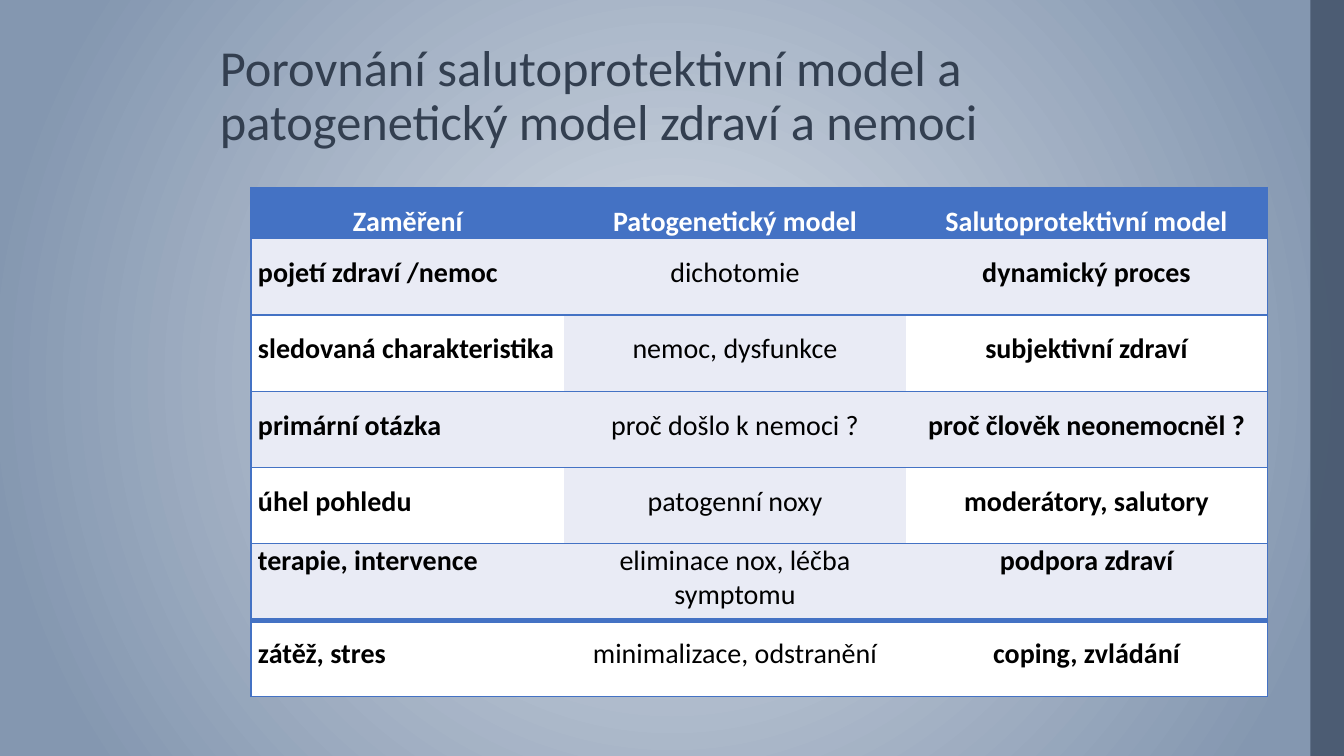
from lxml.etree import SubElement
from pptx import Presentation
from pptx.dml.color import RGBColor
from pptx.enum.shapes import MSO_SHAPE
from pptx.enum.text import MSO_ANCHOR, PP_ALIGN
from pptx.oxml.ns import qn
from pptx.util import Pt

COLORS = {
    "glow": "D6DCE5",
    "backdrop": "8497B0",
    "stripe": "44546A",
    "title": "333F50",
    "accent": "4472C4",
    "band": "E9EBF5",
    "white": "FFFFFF",
    "black": "000000",
}
FONT = "Calibri"
SLIDE_WIDTH, SLIDE_HEIGHT = 960, 540
TITLE = "Porovnání salutoprotektivní model a patogenetický model zdraví a nemoci"
COMPARISON = [
    ("Zaměření", "Patogenetický model", "Salutoprotektivní model"),
    ("pojetí zdraví /nemoc", "dichotomie", "dynamický proces"),
    ("sledovaná charakteristika", "nemoc, dysfunkce", "subjektivní zdraví"),
    ("primární otázka", "proč došlo k nemoci ?", "proč člověk neonemocněl ?"),
    ("úhel pohledu", "patogenní noxy", "moderátory, salutory"),
    ("terapie, intervence", "eliminace nox, léčba symptomu", "podpora zdraví"),
    ("zátěž, stres", "minimalizace, odstranění", "coping, zvládání"),
]
COLUMN_SHARES = (3.11, 3.39, 3.59)
HEADER_HEIGHT = 36.6
THERAPY_ROW = 5
STRESS_ROW = 6


def color(name):
    return RGBColor.from_string(COLORS[name])


def add_run(paragraph, wording, size, color_name, bold=False):
    run = paragraph.add_run()
    run.text = wording
    run.font.name = FONT
    run.font.size = Pt(size)
    run.font.bold = bold
    run.font.color.rgb = color(color_name)


def paint_background(slide):
    fill = slide.background.fill
    fill.gradient()
    for stop, name, position in zip(fill.gradient_stops, ("glow", "backdrop"), (0, 0.9)):
        stop.color.rgb = color(name)
        stop.position = position
    gradient = slide.element.find(".//" + qn("a:gradFill"))
    gradient.remove(gradient.find(qn("a:lin")))
    circle = SubElement(gradient, qn("a:path"), {"path": "circle"})
    SubElement(circle, qn("a:fillToRect"), {side: "50000" for side in "ltrb"})


def add_stripe(slide, left, top, width, height):
    stripe = slide.shapes.add_shape(
        MSO_SHAPE.RECTANGLE, Pt(left), Pt(top), Pt(width), Pt(height))
    stripe.shadow.inherit = False
    stripe.fill.solid()
    stripe.fill.fore_color.rgb = color("stripe")
    stripe.line.fill.background()
    tint = stripe.element.spPr.find(qn("a:solidFill"))[0]
    SubElement(tint, qn("a:alpha"), {"val": "87000"})


def add_title(slide, left, top, width, height):
    frame = slide.shapes.add_textbox(
        Pt(left), Pt(top), Pt(width), Pt(height)).text_frame
    frame.word_wrap = True
    frame.vertical_anchor = MSO_ANCHOR.BOTTOM
    heading = frame.paragraphs[0]
    heading.line_spacing = 0.9
    add_run(heading, TITLE, 36, "title")


def set_borders(cell, widths):
    properties = cell._tc.get_or_add_tcPr()
    for side, width in widths.items():
        border = SubElement(properties, qn(f"a:ln{side}"), {"w": str(Pt(width))})
        if width:
            paint = SubElement(border, qn("a:solidFill"))
            SubElement(paint, qn("a:srgbClr"), {"val": COLORS["accent"]})
        else:
            SubElement(border, qn("a:noFill"))


def cell_fill(row, column):
    if row == 0:
        return "accent"
    if row % 2 or (column == 1 and row != STRESS_ROW):
        return "band"
    return "white"


def fill_cell(cell, row, column, wording):
    set_borders(cell, {
        "L": 1 if column == 0 else 0,
        "R": 1 if column == len(COLUMN_SHARES) - 1 else 0,
        "T": 4 if row == STRESS_ROW else 1,
        "B": 4 if row == THERAPY_ROW else 1,
    })
    cell.fill.solid()
    cell.fill.fore_color.rgb = color(cell_fill(row, column))
    cell.margin_left = cell.margin_right = Pt(5)
    cell.margin_top = cell.margin_bottom = Pt(0)
    entry = cell.text_frame.paragraphs[0]
    entry.alignment = PP_ALIGN.LEFT if row and column == 0 else PP_ALIGN.CENTER
    entry.line_spacing = 1.0 if row == THERAPY_ROW else 1.5
    add_run(entry, wording, 20, "black" if row else "white", row == 0 or column != 1)


def add_comparison(slide, left, top, width, height):
    table = slide.shapes.add_table(
        len(COMPARISON), len(COLUMN_SHARES),
        Pt(left), Pt(top), Pt(width), Pt(height)).table
    table.first_row = table.horz_banding = False
    for column, share in zip(table.columns, COLUMN_SHARES):
        column.width = Pt(width * share / sum(COLUMN_SHARES))
    body_height = (height - HEADER_HEIGHT) / (len(COMPARISON) - 1)
    for row, entries in enumerate(COMPARISON):
        table.rows[row].height = Pt(body_height if row else HEADER_HEIGHT)
        for column, wording in enumerate(entries):
            fill_cell(table.cell(row, column), row, column, wording)


def main():
    presentation = Presentation()
    presentation.slide_width = Pt(SLIDE_WIDTH)
    presentation.slide_height = Pt(SLIDE_HEIGHT)
    slide = presentation.slides.add_slide(presentation.slide_layouts[6])
    paint_background(slide)
    add_stripe(slide, 936, 0, SLIDE_WIDTH - 936, SLIDE_HEIGHT)
    add_title(slide, 150, 13.7, 746, 98)
    add_comparison(slide, 179.3, 133.9, 726, 363.6)
    presentation.save("out.pptx")


if __name__ == "__main__":
    main()
